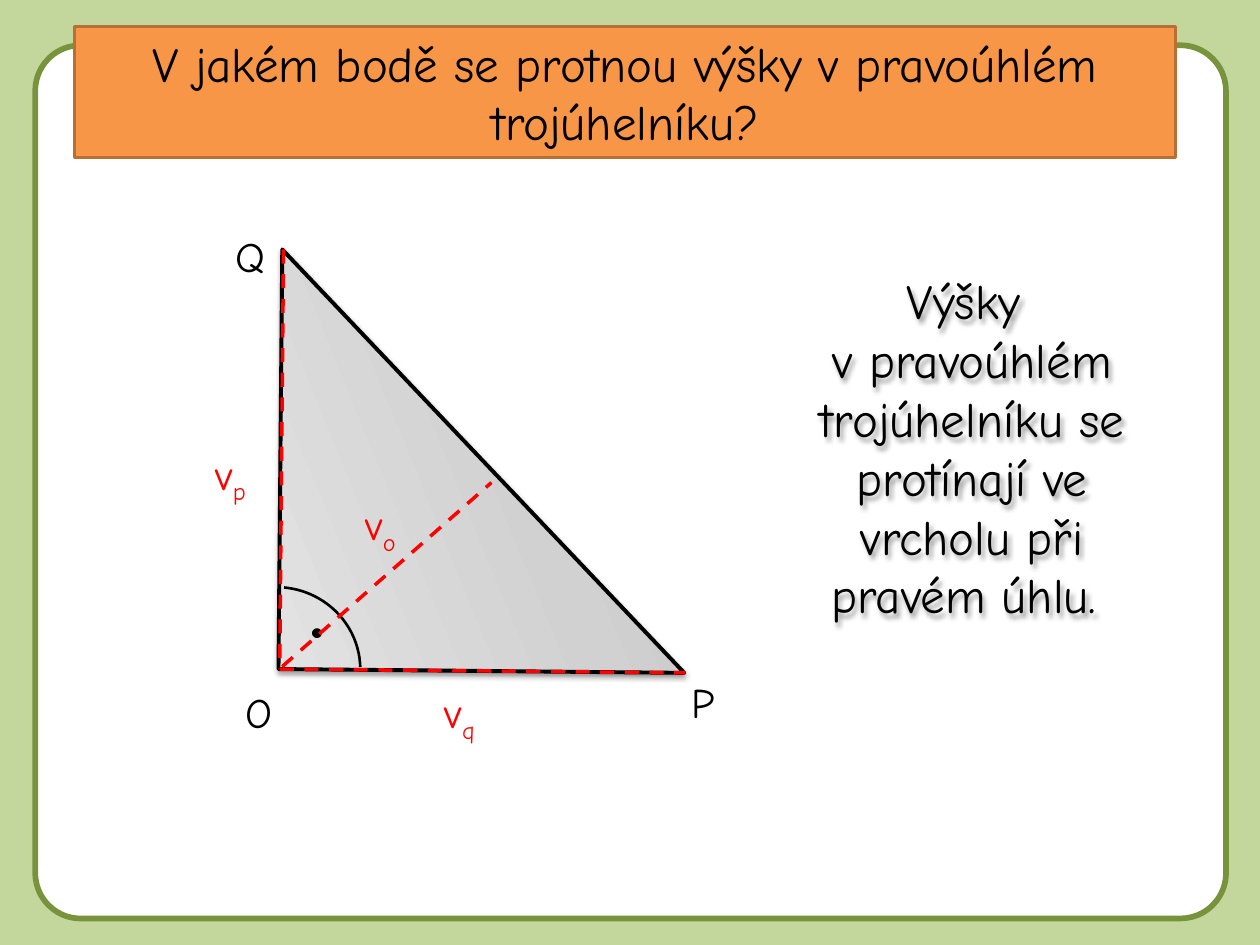
from dataclasses import dataclass
from math import cos, radians, sin
from lxml import etree
from pptx import Presentation
from pptx.dml.color import RGBColor as RGB
from pptx.enum.dml import MSO_LINE as DASH
from pptx.enum.shapes import MSO_CONNECTOR, MSO_SHAPE as SHAPE
from pptx.enum.text import MSO_ANCHOR as ANCHOR, MSO_AUTO_SIZE as AUTO, PP_ALIGN as ALIGN
from pptx.oxml import parse_xml
from pptx.oxml.ns import nsdecls, qn
from pptx.util import Inches, Pt


@dataclass(frozen=True)
class Theme:
    font: str = "Comic Neue"
    heading: int = 28
    label: int = 24
    black: RGB = RGB(0, 0, 0)
    white: RGB = RGB(255, 255, 255)
    red: RGB = RGB(255, 0, 0)
    page: RGB = RGB.from_string("C3D69B")
    frame: RGB = RGB.from_string("77933C")
    orange: RGB = RGB.from_string("F79646")
    brown: RGB = RGB.from_string("B76F34")
    greys: tuple = ((0, "BDBDBD"), (35, "D1D1D1"), (100, "EEEEEE"))


T = Theme()
prs = Presentation()
prs.slide_width, prs.slide_height = Inches(10), Inches(7.5)
U = prs.slide_width / 10  # square grid: 10 columns by 7.5 rows
s = prs.slides.add_slide(prs.slide_layouts[6])
s.background.fill.solid()
s.background.fill.fore_color.rgb = T.page


def write(sp, lines, size, color, align=ALIGN.LEFT):
    """Fill a shape with paragraphs; each line is a list of (text, baseline)."""
    tf = sp.text_frame
    tf.word_wrap, tf.auto_size = True, AUTO.SHAPE_TO_FIT_TEXT
    for i, parts in enumerate(lines):
        p = tf.paragraphs[0] if i == 0 else tf.add_paragraph()
        p.alignment = align
        for text, baseline in parts:
            r = p.add_run()
            r.text = text
            r.font.name, r.font.size = T.font, Pt(size)
            r.font.color.rgb = color
            if baseline:
                r._r.get_or_add_rPr().set("baseline", str(baseline * 1000))


def cast_shadow(sp, blur, dist, angle, alpha):
    """Give a shape a soft black shadow."""
    sp.shadow.inherit = False
    sp._element.spPr.find(qn("a:effectLst")).append(parse_xml(
        f'<a:outerShdw {nsdecls("a")} blurRad="{Pt(blur)}" dist="{Pt(dist)}" '
        f'dir="{angle * 60000}" rotWithShape="0"><a:srgbClr val="000000">'
        f'<a:alpha val="{alpha * 1000}"/></a:srgbClr></a:outerShdw>'))


# Triangle corners, turned back about the centre so that the shape's rotation restores them
O, P, Q = (2.22, 5.31), (5.44, 5.34), (2.25, 1.98)
TURN, CX, CY = 247.8, 3.245, 3.9
c, d = cos(radians(TURN)), sin(radians(TURN))
corners = [(1000 * (CX + (x - CX) * c + (y - CY) * d),
            1000 * (CY - (x - CX) * d + (y - CY) * c)) for x, y in (O, P, Q)]

# Frame, title bar, triangle, right-angle arc and its dot share one recipe
shapes = {}
for part, kind, box, fill, line, width in (
    ("frame", SHAPE.ROUNDED_RECTANGLE, (0.28, 0.36, 9.45, 6.93), T.white, T.frame, 3.25),
    ("title", SHAPE.RECTANGLE, (0.59, 0.21, 8.74, 1.04), T.orange, T.brown, 2),
    ("triangle", None, None, None, T.black, 2.25),
    ("angle", SHAPE.ARC, (1.52, 4.66, 1.34, 1.31), None, T.black, 1.5),
    ("dot", SHAPE.OVAL, (2.49, 5, 0.05, 0.05), T.black, T.black, 2),
):
    if kind is None:
        fb = s.shapes.build_freeform(*corners[0], scale=U / 1000)
        fb.add_line_segments(corners[1:], close=True)
        sp = fb.convert_to_shape()
    else:
        sp = s.shapes.add_shape(kind, *(int(v * U) for v in box))
    sp.shadow.inherit = False
    if fill is None:
        sp.fill.background()
    else:
        sp.fill.solid()
        sp.fill.fore_color.rgb = fill
    sp.line.color.rgb, sp.line.width = line, Pt(width)
    shapes[part] = sp

shapes["frame"].adjustments[0] = 0.052
shapes["angle"].rotation = -3.9
for i, degrees in enumerate((279.6, 2.12)):
    shapes["angle"].adjustments[i] = degrees * 0.6

# Title text
shapes["title"].text_frame.vertical_anchor = ANCHOR.MIDDLE
write(shapes["title"], [[("V jakém bodě se protnou výšky v pravoúhlém trojúhelníku?", 0)]],
      T.heading, T.black, ALIGN.CENTER)

# Triangle: grey gradient that turns with the shape, and a shadow
shapes["triangle"].rotation = TURN
stops = "".join(f'<a:gs pos="{pos * 1000}"><a:srgbClr val="{grey}"/></a:gs>'
                for pos, grey in T.greys)
spPr = shapes["triangle"]._element.spPr
spPr.replace(spPr.find(qn("a:noFill")), parse_xml(
    f'<a:gradFill {nsdecls("a")} rotWithShape="1"><a:gsLst>{stops}</a:gsLst>'
    f'<a:lin ang="{270 * 60000}" scaled="0"/></a:gradFill>'))
cast_shadow(shapes["triangle"], 3.1, 1.6, 90, 38)

# Answer
answer = s.shapes.add_textbox(*(int(v * U) for v in (6.1, 2.1, 3.23, 2.93)))
write(answer, [
    [("Výšky ", 0)],
    [("v pravoúhlém trojúhelníku se protínají ve vrcholu při pravém úhlu. ", 0)],
], T.heading, T.black, ALIGN.CENTER)
cast_shadow(answer, 3, 2.5, 60, 40)

# Altitudes
for start, end in (((2.24, 5.29), (3.9, 3.83)), (O, P), (Q, O)):
    ln = s.shapes.add_connector(MSO_CONNECTOR.STRAIGHT, *(int(v * U) for v in start + end))
    ln.line.color.rgb, ln.line.width = T.red, Pt(2)
    ln.line.dash_style = DASH.DASH
    etree.SubElement(ln._element.spPr, qn("a:effectLst"))

# Vertex and altitude labels
for text, sub, x, y, width in (
    ("Q", "", 1.77, 1.78, 0.47),
    ("P", "", 5.39, 5.32, 0.54),
    ("O", "", 1.85, 5.4, 0.47),
    ("v", "o", 2.8, 3.91, 0.55),
    ("v", "p", 1.61, 3.51, 0.55),
    ("v", "q", 3.43, 5.4, 0.55),
):
    sp = s.shapes.add_textbox(*(int(v * U) for v in (x, y, width, 0.5)))
    parts = [(text, 0), (sub, -25)] if sub else [(text, 0)]
    write(sp, [parts], T.label, T.red if sub else T.black)

prs.save("out.pptx")
